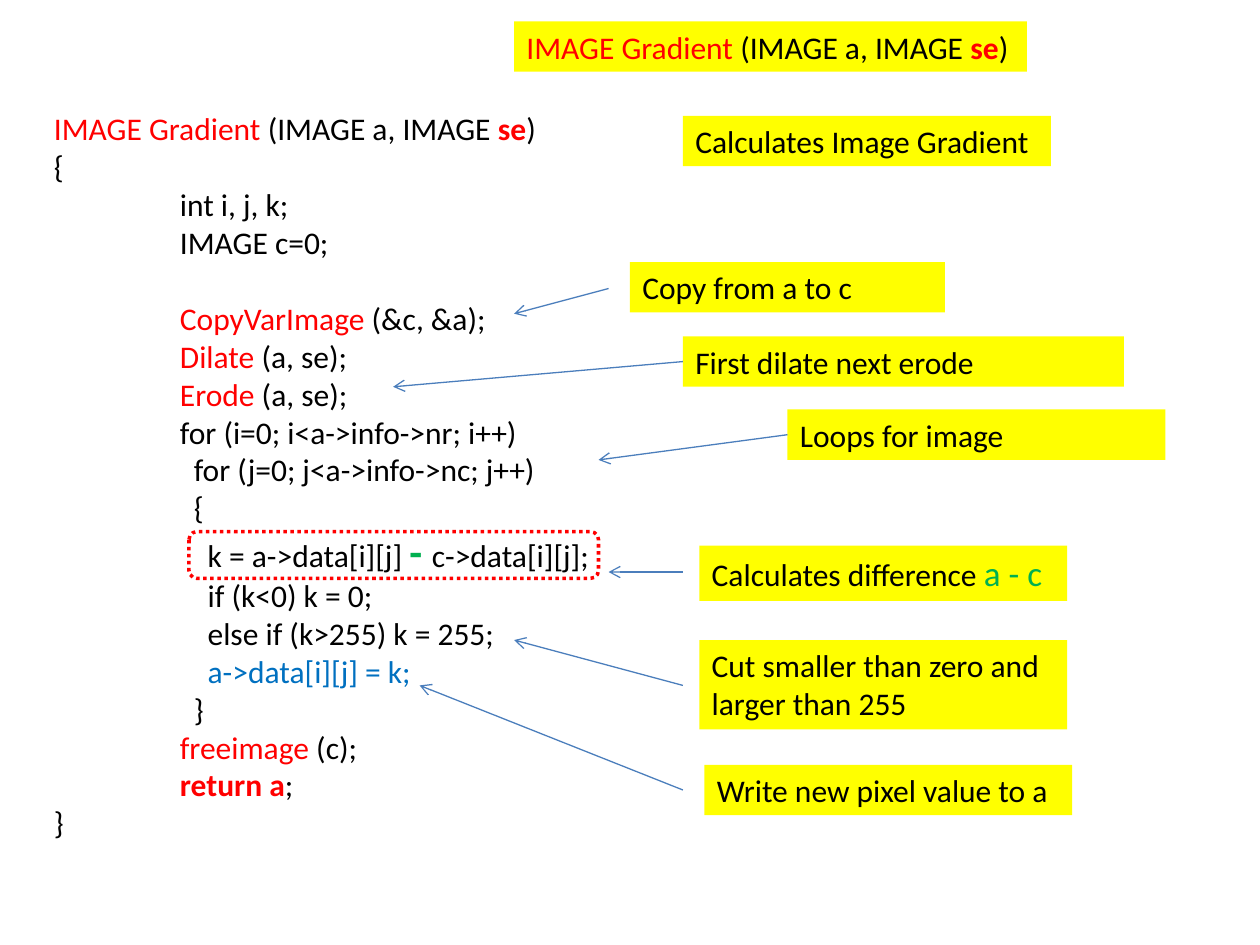
from dataclasses import dataclass

from lxml.etree import SubElement
from pptx import Presentation
from pptx.dml.color import RGBColor as Color
from pptx.enum.dml import MSO_LINE as Dash
from pptx.enum.shapes import MSO_CONNECTOR as Connector, MSO_SHAPE as Preset
from pptx.enum.text import MSO_ANCHOR as Anchor, MSO_AUTO_SIZE as AutoSize, PP_ALIGN as Align
from pptx.oxml.ns import qn
from pptx.util import Inches, Pt


@dataclass(frozen=True)
class Theme:
    font: str = "Calibri"
    body: int = 18
    formula: int = 20
    operator: int = 24
    black: str = "000000"
    red: str = "FF0000"
    green: str = "00B050"
    blue: str = "0070C0"
    yellow: str = "FFFF00"
    arrow: str = "4B7EBC"
    arrow_width: float = 0.75
    outline_width: float = 2

    def run_format(self, style):
        formats = {
            "plain": (self.body, self.black, False),
            "name": (self.body, self.red, False),
            "strong": (self.body, self.red, True),
            "result": (self.body, self.blue, False),
            "operator": (self.operator, self.green, True),
            "formula": (self.formula, self.green, False),
        }
        size, color, bold = formats[style]
        return {"name": self.font, "size": Pt(size), "bold": bold}, color


class SlideBuilder:
    """Draws styled text, notes, outlines and arrows on one slide."""

    def __init__(self, slide, theme):
        self.shapes = slide.shapes
        self.theme = theme

    def add_runs(self, paragraph, runs):
        for text, style in runs:
            run = paragraph.add_run()
            run.text = text
            values, color = self.theme.run_format(style)
            for key, value in values.items():
                setattr(run.font, key, value)
            run.font.color.rgb = Color.from_string(color)

    def set_frame(self, shape, wrap=True):
        frame = shape.text_frame
        values = {
            "word_wrap": wrap,
            "auto_size": AutoSize.SHAPE_TO_FIT_TEXT,
            "vertical_anchor": Anchor.TOP,
        }
        for key, value in values.items():
            setattr(frame, key, value)
        return frame

    def code(self, box, lines):
        frame = self.set_frame(self.shapes.add_textbox(*map(Inches, box)))
        for index, (indent, space_before, runs) in enumerate(lines):
            paragraph = frame.paragraphs[0] if index == 0 else frame.add_paragraph()
            paragraph._p.get_or_add_pPr().set("marL", str(Inches(indent)))
            paragraph.space_before = Pt(space_before)
            self.add_runs(paragraph, runs)

    def note(self, box, runs, wrap=True):
        shape = self.shapes.add_shape(Preset.RECTANGLE, *map(Inches, box))
        shape.shadow.inherit = False
        shape.fill.solid()
        shape.fill.fore_color.rgb = Color.from_string(self.theme.yellow)
        shape.line.fill.background()
        paragraph = self.set_frame(shape, wrap).paragraphs[0]
        paragraph.alignment = Align.LEFT
        self.add_runs(paragraph, runs)

    def outline(self, box):
        shape = self.shapes.add_shape(Preset.ROUNDED_RECTANGLE, *map(Inches, box))
        shape.shadow.inherit = False
        shape.fill.background()
        shape.line.color.rgb = Color.from_string(self.theme.red)
        values = {"width": Pt(self.theme.outline_width), "dash_style": Dash.ROUND_DOT}
        for key, value in values.items():
            setattr(shape.line, key, value)

    def arrow(self, start, end):
        connector = self.shapes.add_connector(Connector.STRAIGHT, *map(Inches, start + end))
        connector.line.color.rgb = Color.from_string(self.theme.arrow)
        connector.line.width = Pt(self.theme.arrow_width)
        properties = connector._element.spPr
        SubElement(properties.find(qn("a:ln")), qn("a:tailEnd"), type="arrow")
        SubElement(properties, qn("a:effectLst"))


def plain(text):
    return [(text, "plain")]


def call(name, arguments):
    return [(name, "name"), (arguments, "plain")]


BODY, STEP, BLANK_LINE = 1, 0.11, 22
LOOP, INNER = BODY + STEP, BODY + 2 * STEP

SIGNATURE = call("IMAGE Gradient ", "(IMAGE a, IMAGE ") + [("se", "strong"), (")", "plain")]

CODE = [
    (0, 0, SIGNATURE),
    (0, 0, plain("{")),
    (BODY, 0, plain("int i, j, k;")),
    (BODY, 0, plain("IMAGE c=0;")),
    (BODY, BLANK_LINE, call("CopyVarImage", " (&c, &a);")),
    (BODY, 0, call("Dilate", " (a, se);")),
    (BODY, 0, call("Erode", " (a, se);")),
    (BODY, 0, plain("for (i=0; i<a->info->nr; i++)")),
    (LOOP, 0, plain("for (j=0; j<a->info->nc; j++)")),
    (LOOP, 0, plain("{")),
    (INNER, 0, plain("k = a->data[i][j] ") + [("- ", "operator")] + plain("c->data[i][j];")),
    (INNER, 0, plain("if (k<0) k = 0;")),
    (INNER, 0, plain("else if (k>255) k = 255;")),
    (INNER, 0, [("a->data[i][j] = k;", "result")]),
    (LOOP, 0, plain("}")),
    (BODY, 0, call("freeimage", " (c);")),
    (BODY, 0, [("return a", "strong"), (";", "plain")]),
    (0, 0, plain("}")),
]

NOTES = [
    ((5.42, 0.92, 2.92, 0.4), plain("Calculates Image Gradient")),
    ((5, 2.08, 2.5, 0.4), plain("Copy from a to c")),
    ((5.42, 2.67, 3.5, 0.4), plain("First dilate next erode")),
    ((6.25, 3.25, 3, 0.4), plain("Loops for image")),
    ((5.55, 4.33, 2.92, 0.44), plain("Calculates difference ") + [("a - c", "formula")]),
    ((5.55, 5.08, 2.92, 0.71), plain("Cut smaller than zero and larger than 255")),
    ((5.59, 6.07, 2.92, 0.4), plain("Write new pixel value to a")),
]

ARROWS = [
    ((4.83, 2.29), (4.08, 2.49)),
    ((5.42, 2.87), (3.12, 3.07)),
    ((6.25, 3.45), (4.75, 3.65)),
    ((5.42, 4.54), (4.83, 4.54)),
    ((5.42, 5.44), (4.08, 5.08)),
    ((5.42, 6.27), (3.33, 5.44)),
]


def main():
    presentation = Presentation()
    presentation.slide_width, presentation.slide_height = Inches(10), Inches(7.5)
    slide = presentation.slides.add_slide(presentation.slide_layouts[6])
    builder = SlideBuilder(slide, Theme())
    builder.code((0.33, 0.82, 7.17, 5.96), CODE)
    builder.note((4.08, 0.17, 4.07, 0.4), SIGNATURE, wrap=False)
    for box, runs in NOTES:
        builder.note(box, runs)
    for start, end in ARROWS:
        builder.arrow(start, end)
    builder.outline((1.5, 4.22, 3.25, 0.37))
    presentation.save("out.pptx")


if __name__ == "__main__":
    main()
